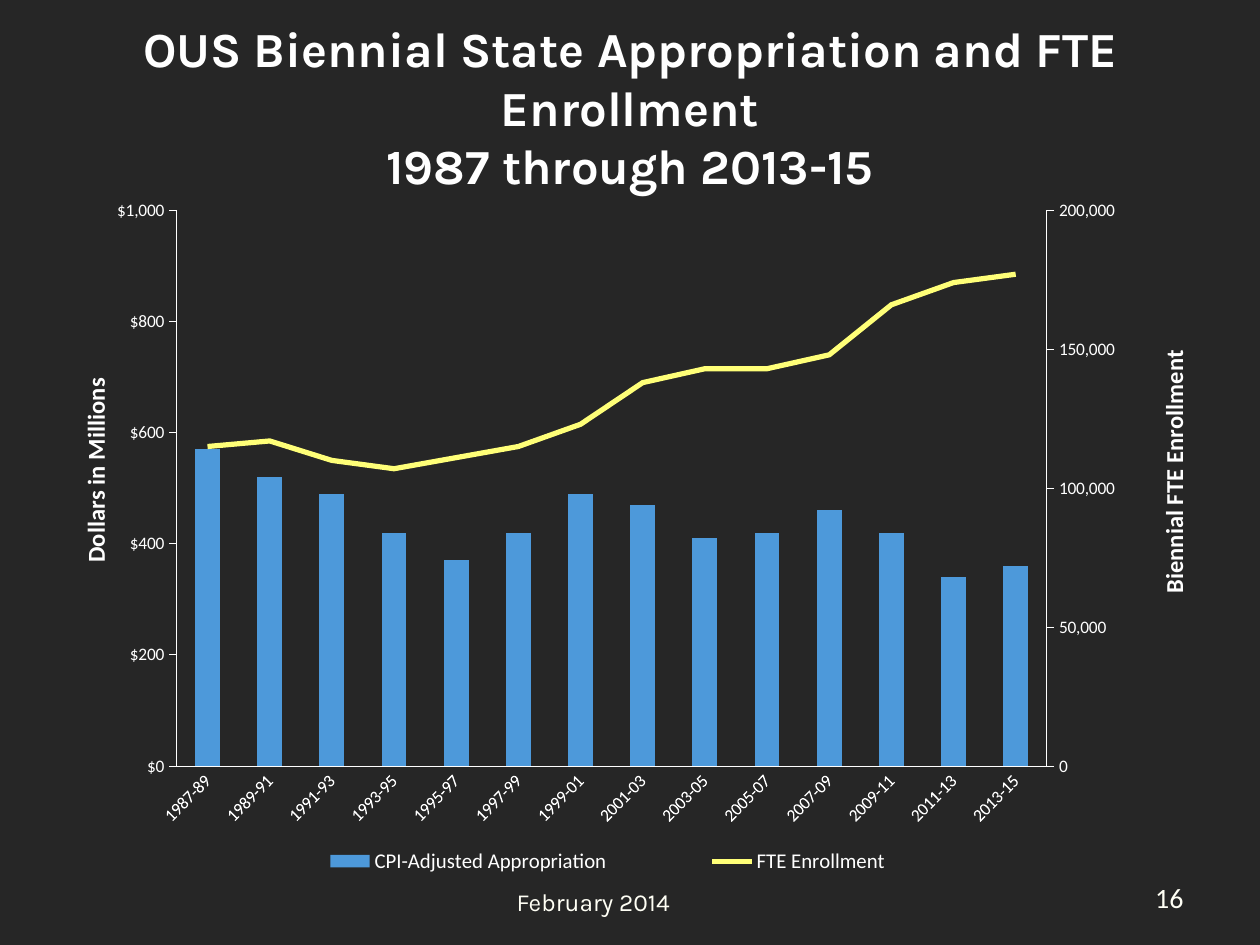
from copy import deepcopy
from dataclasses import dataclass

from lxml import etree
from pptx import Presentation
from pptx.chart.data import CategoryChartData
from pptx.dml.color import RGBColor
from pptx.enum.chart import XL_CHART_TYPE as ChartType
from pptx.enum.chart import XL_LEGEND_POSITION as LegendPosition
from pptx.enum.chart import XL_MARKER_STYLE as MarkerStyle
from pptx.enum.chart import XL_TICK_MARK as TickMark
from pptx.enum.text import MSO_ANCHOR as Anchor
from pptx.enum.text import PP_ALIGN as Align
from pptx.oxml import parse_xml
from pptx.oxml.ns import nsdecls, qn
from pptx.util import Inches, Pt


@dataclass(frozen=True)
class Theme:
    """Colours, fonts and type sizes of the deck."""
    ground: str = "262626"
    white: str = "FFFFFF"
    footer: str = "FFFFF5"
    bar: str = "4D99DA"
    line: str = "FFFF78"
    heading_font: str = "Karla"
    body_font: str = "Calibri"
    title_size: int = 28
    number_size: int = 16
    label_size: int = 14
    legend_size: int = 12
    tick_size: int = 10


THEME = Theme()
PERIODS = ["1987-89", "1989-91", "1991-93", "1993-95", "1995-97", "1997-99", "1999-01",
           "2001-03", "2003-05", "2005-07", "2007-09", "2009-11", "2011-13", "2013-15"]
APPROPRIATION = [570, 520, 490, 420, 370, 420, 490, 470, 410, 420, 460, 420, 340, 360]
ENROLLMENT = [115000, 117000, 110000, 107000, 111000, 115000, 123000,
              138000, 143000, 143000, 148000, 166000, 174000, 177000]


def style_font(font, name, size, color, bold=False):
    """Set the face, size, colour and weight of a font."""
    font.name, font.size, font.bold = name, Pt(size), bold
    font.color.rgb = RGBColor.from_string(color)


def add_span(para, text, *style):
    """Add one styled run to a paragraph."""
    span = para.add_run()
    span.text = text
    style_font(span.font, *style)


def place(shape, box):
    """Move a shape to a box given in inches."""
    shape.left, shape.top, shape.width, shape.height = map(Inches, box)


def fill_title(page, box):
    """Place and write the slide title."""
    title = page.shapes.title
    place(title, box)
    frame = title.text_frame
    frame.word_wrap, frame.vertical_anchor = True, Anchor.MIDDLE
    para = frame.paragraphs[0]
    para.alignment = Align.CENTER
    style = (THEME.heading_font, THEME.title_size, THEME.white, True)
    add_span(para, "OUS Biennial State Appropriation and FTE Enrollment", *style)
    para.add_line_break()
    add_span(para, "1987 through 2013-15", *style)


def add_footer_text(page, box, text, font, size, inset=0.1):
    """Add a footer text that starts at an inset within its box."""
    frame = page.shapes.add_textbox(*map(Inches, box)).text_frame
    frame.word_wrap, frame.margin_left = True, Inches(inset)
    add_span(frame.paragraphs[0], text, font, size, THEME.footer)


def set_layout(parent, index, target=None, **shares):
    """Give a chart part a manual layout in shares of the chart."""
    for old in parent.findall(qn("c:layout")):
        parent.remove(old)
    layout = parse_xml(f"<c:layout {nsdecls('c')}><c:manualLayout/></c:layout>")
    manual = layout[0]
    settings = {"layoutTarget": target} if target else {}
    settings |= {"xMode": "edge", "yMode": "edge"} | shares
    for name, value in settings.items():
        etree.SubElement(manual, qn(f"c:{name}")).set("val", str(value))
    parent.insert(index, layout)


def style_axis(axis, tick):
    """Give an axis its line, ticks and label font."""
    axis.has_major_gridlines = False
    axis.major_tick_mark, axis.minor_tick_mark = tick, TickMark.NONE
    axis.format.line.color.rgb = RGBColor.from_string(THEME.white)
    axis.format.line.width = Pt(0.5)
    style_font(axis.tick_labels.font, THEME.body_font, THEME.tick_size, THEME.white)


def style_value_axis(axis):
    """Set the scale, number format and title of the dollar axis."""
    style_axis(axis, TickMark.OUTSIDE)
    axis.minimum_scale, axis.maximum_scale, axis.major_unit = 0, 1000, 200
    axis.tick_labels.number_format = "\\$#,##0"
    axis.tick_labels.number_format_is_linked = False
    frame = axis.axis_title.text_frame
    add_span(frame.paragraphs[0], "Dollars in Millions", THEME.body_font,
             THEME.label_size, THEME.white, True)


def set_values(parent, **values):
    """Set the values of the named chart elements within a parent."""
    for name, value in values.items():
        for item in parent.iter(qn(f"c:{name}")):
            item.set("val", value)


def move_to_right_axis(plot_area):
    """Turn the second series into a line on an axis of its own."""
    bars = plot_area.find(qn("c:barChart"))
    series = bars.findall(qn("c:ser"))[1]
    for flag in series.findall(qn("c:invertIfNegative")):
        series.remove(flag)
    lines = parse_xml(
        f'<c:lineChart {nsdecls("c")}><c:grouping val="standard"/><c:varyColors val="0"/>'
        '<c:marker val="1"/><c:axId val="5001"/><c:axId val="5002"/></c:lineChart>')
    lines.insert(2, series)
    bars.addnext(lines)

    left = plot_area.find(qn("c:valAx"))
    right = deepcopy(left)
    set_values(right, axId="5002", crossAx="5001", axPos="r", crosses="max",
               majorUnit="50000", max="200000")
    right.find(qn("c:numFmt")).set("formatCode", '#,##0;\\-#,##0;"0";')
    next(right.iter(qn("a:t"))).text = "Biennial FTE Enrollment"
    left.addnext(right)

    hidden = deepcopy(plot_area.find(qn("c:catAx")))
    set_values(hidden, axId="5001", crossAx="5002", delete="1")
    right.addnext(hidden)

    for axis, x, y in ((left, 0.01, 0.27), (right, 0.97, 0.23)):
        title = axis.find(qn("c:title"))
        next(title.iter(qn("a:bodyPr"))).set("rot", "-5400000")
        set_layout(title, 1, x=x, y=y)


def add_trend_chart(page, box):
    """Add the appropriation columns and the enrollment line."""
    data = CategoryChartData()
    data.categories = PERIODS
    data.add_series("CPI-Adjusted Appropriation", APPROPRIATION)
    data.add_series("FTE Enrollment", ENROLLMENT)
    chart = page.shapes.add_chart(
        ChartType.COLUMN_CLUSTERED, *map(Inches, box), data).chart
    chart.has_title = False
    style_font(chart.font, THEME.body_font, THEME.tick_size, THEME.white)
    style_axis(chart.category_axis, TickMark.NONE)
    style_value_axis(chart.value_axis)

    plot_area = next(chart.element.iter(qn("c:plotArea")))
    labels = plot_area.find(qn("c:catAx")).find(qn("c:txPr"))
    labels.find(qn("a:bodyPr")).set("rot", "-2700000")
    move_to_right_axis(plot_area)
    set_layout(plot_area, 0, "inner", x=0.101, y=0.044, w=0.775, h=0.778)

    columns, lines = chart.plots
    columns.gap_width, columns.vary_by_categories = 150, False
    fill = columns.series[0].format.fill
    fill.solid()
    fill.fore_color.rgb = RGBColor.from_string(THEME.bar)
    trend = lines.series[0]
    trend.smooth, trend.marker.style = False, MarkerStyle.NONE
    trend.format.line.color.rgb = RGBColor.from_string(THEME.line)
    trend.format.line.width = Pt(3)

    chart.has_legend = True
    legend = chart.legend
    legend.position, legend.include_in_layout = LegendPosition.BOTTOM, False
    style_font(legend.font, THEME.body_font, THEME.legend_size, THEME.white)
    set_layout(next(chart.element.iter(qn("c:legend"))), 1, x=0.15, y=0.93, w=0.67, h=0.05)


def main():
    """Build the one-slide deck and save it."""
    deck = Presentation()
    deck.slide_width, deck.slide_height = Inches(10), Inches(7.5)
    page = deck.slides.add_slide(deck.slide_layouts[5])
    ground = page.background.fill
    ground.solid()
    ground.fore_color.rgb = RGBColor.from_string(THEME.ground)
    add_footer_text(page, (9.07, 6.94, 0.7, 0.37), "16", THEME.body_font, THEME.number_size)
    add_footer_text(page, (0.5, 6.99, 8.57, 0.34), "February 2014", THEME.heading_font,
                    THEME.label_size, inset=3.6)
    fill_title(page, (0.5, 0.33, 9, 1.03))
    add_trend_chart(page, (0.5, 1.42, 9, 5.67))
    deck.save("out.pptx")


if __name__ == "__main__":
    main()
